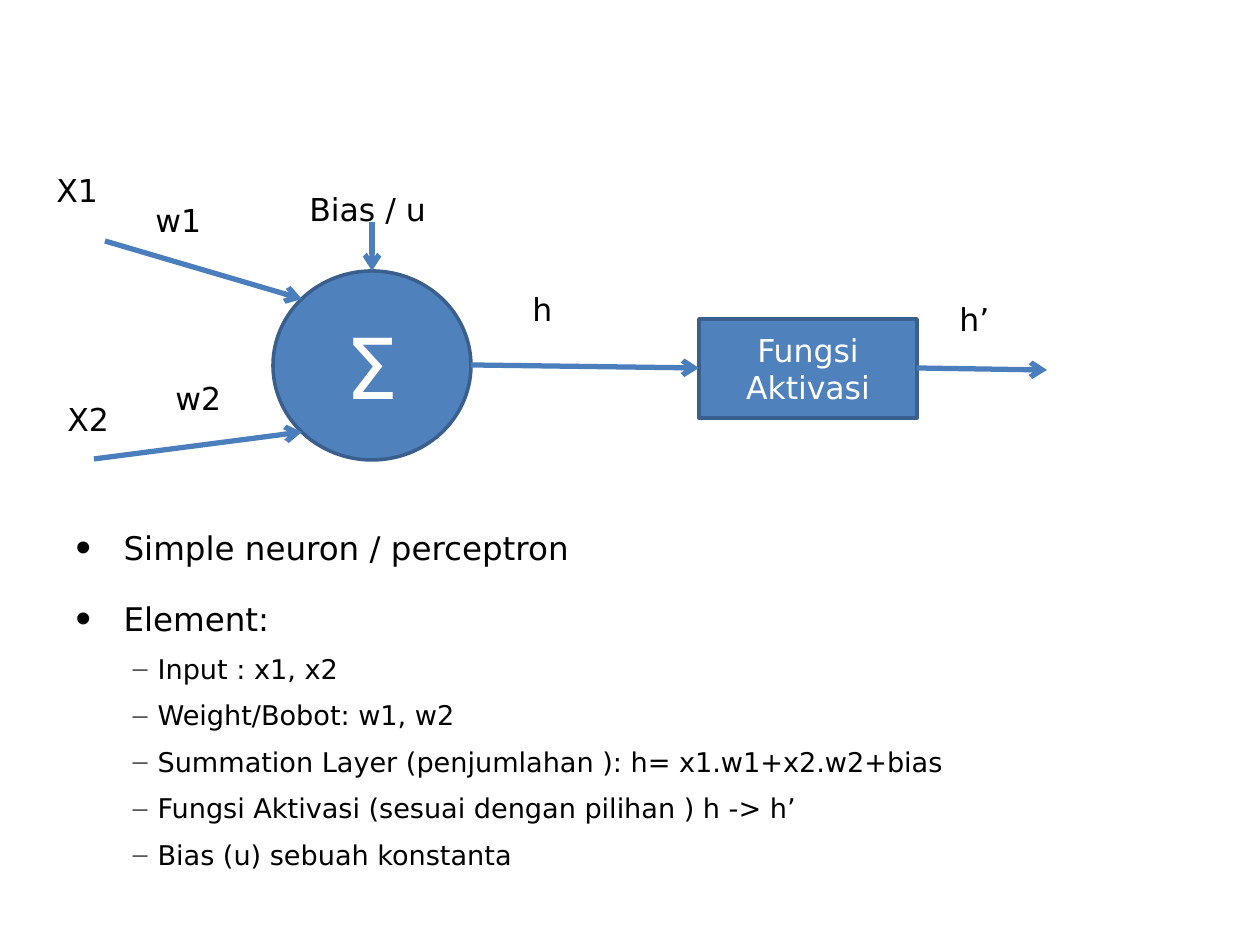
"""Build a slide that explains a simple neuron (perceptron)."""
from lxml import etree
from pptx import Presentation
from pptx import util as u
from pptx.dml.color import RGBColor
from pptx.enum import shapes, text
from pptx.oxml.ns import qn

INK = {"black": "000000", "white": "FFFFFF", "fill": "4F81BD",
       "edge": "3A5F8C", "arrow": "4B7EBC", "dash": "595959"}
FONT = "DejaVu Sans"


def px(n):
    return u.Emu(round(n * 914400 / 126))


def write(para, words, size, ink):
    run = para.add_run()
    run.text = words
    run.font.name = FONT
    run.font.size = u.Pt(size)
    run.font.color.rgb = RGBColor.from_string(INK[ink])


deck = Presentation()
deck.slide_width, deck.slide_height = px(1260), px(945)
slide = deck.slides.add_slide(deck.slide_layouts[1])
title = slide.shapes.title
title.element.getparent().remove(title.element)

body = slide.placeholders[1]
body.left, body.top, body.width, body.height = px(63), px(522), px(1134), px(323)
frame = body.text_frame
frame.auto_size = text.MSO_AUTO_SIZE.NONE
items = [
    (0, "Simple neuron / perceptron"),
    (0, "Element:"),
    (1, "Input : x1, x2"),
    (1, "Weight/Bobot: w1, w2"),
    (1, "Summation Layer (penjumlahan ): h= x1.w1+x2.w2+bias"),
    (1, "Fungsi Aktivasi (sesuai dengan pilihan ) h -> h’"),
    (1, "Bias (u) sebuah konstanta"),
]
looks = [(48, 48, "•", 18, 18.6), (82, 25, "–", 8, 15.5)]
for i, (level, words) in enumerate(items):
    left, hang, mark, gap, size = looks[level]
    para = frame.paragraphs[0] if i == 0 else frame.add_paragraph()
    para.level = level
    props = para._p.get_or_add_pPr()
    props.set("marL", str(px(left)))
    props.set("indent", str(-px(hang)))
    if level:
        tint = etree.SubElement(props, qn("a:buClr"))
        etree.SubElement(tint, qn("a:srgbClr"), val=INK["dash"])
    else:
        etree.SubElement(props, qn("a:buSzPct"), val="135000")
    etree.SubElement(props, qn("a:buChar"), char=mark)
    para.space_before = u.Pt(gap if i else 0)
    write(para, words, size, "black")

nodes = [
    (shapes.MSO_SHAPE.OVAL, 273, 271, 198, 189, "Σ", 48),
    (shapes.MSO_SHAPE.RECTANGLE, 699, 319, 218, 99, "Fungsi Aktivasi", 18),
]
for kind, x, y, w, h, words, size in nodes:
    node = slide.shapes.add_shape(kind, px(x), px(y), px(w), px(h))
    node.shadow.inherit = False
    node.fill.solid()
    node.fill.fore_color.rgb = RGBColor.from_string(INK["fill"])
    node.line.color.rgb = RGBColor.from_string(INK["edge"])
    node.line.width = u.Pt(2)
    frame = node.text_frame
    frame.word_wrap = True
    frame.vertical_anchor = text.MSO_ANCHOR.MIDDLE
    para = frame.paragraphs[0]
    para.alignment = text.PP_ALIGN.CENTER
    write(para, words, size, "white")

arrows = [
    (105, 241, 302, 299),
    (917, 368, 1047, 370),
    (471, 365, 699, 368),
    (94, 459, 302, 432),
    (372, 222, 372, 271),
]
for ends in arrows:
    arrow = slide.shapes.add_connector(shapes.MSO_CONNECTOR.STRAIGHT, *map(px, ends))
    arrow.line.color.rgb = RGBColor.from_string(INK["arrow"])
    arrow.line.width = u.Pt(3)
    etree.SubElement(arrow.line._get_or_add_ln(), qn("a:tailEnd"), type="arrow")
    etree.SubElement(arrow._element.spPr, qn("a:effectLst"))

labels = [
    ("X1", 44, 165, 79),
    ("Bias / u", 297, 184, 149),
    ("X2", 55, 394, 79),
    ("h", 520, 284, 79),
    ("h’", 947, 294, 79),
    ("w1", 143, 195, 149),
    ("w2", 163, 373, 149),
]
for words, x, y, w in labels:
    label = slide.shapes.add_textbox(px(x), px(y), px(w), px(51))
    label.text_frame.word_wrap = True
    label.text_frame.auto_size = text.MSO_AUTO_SIZE.SHAPE_TO_FIT_TEXT
    write(label.text_frame.paragraphs[0], words, 18, "black")

deck.save("out.pptx")
